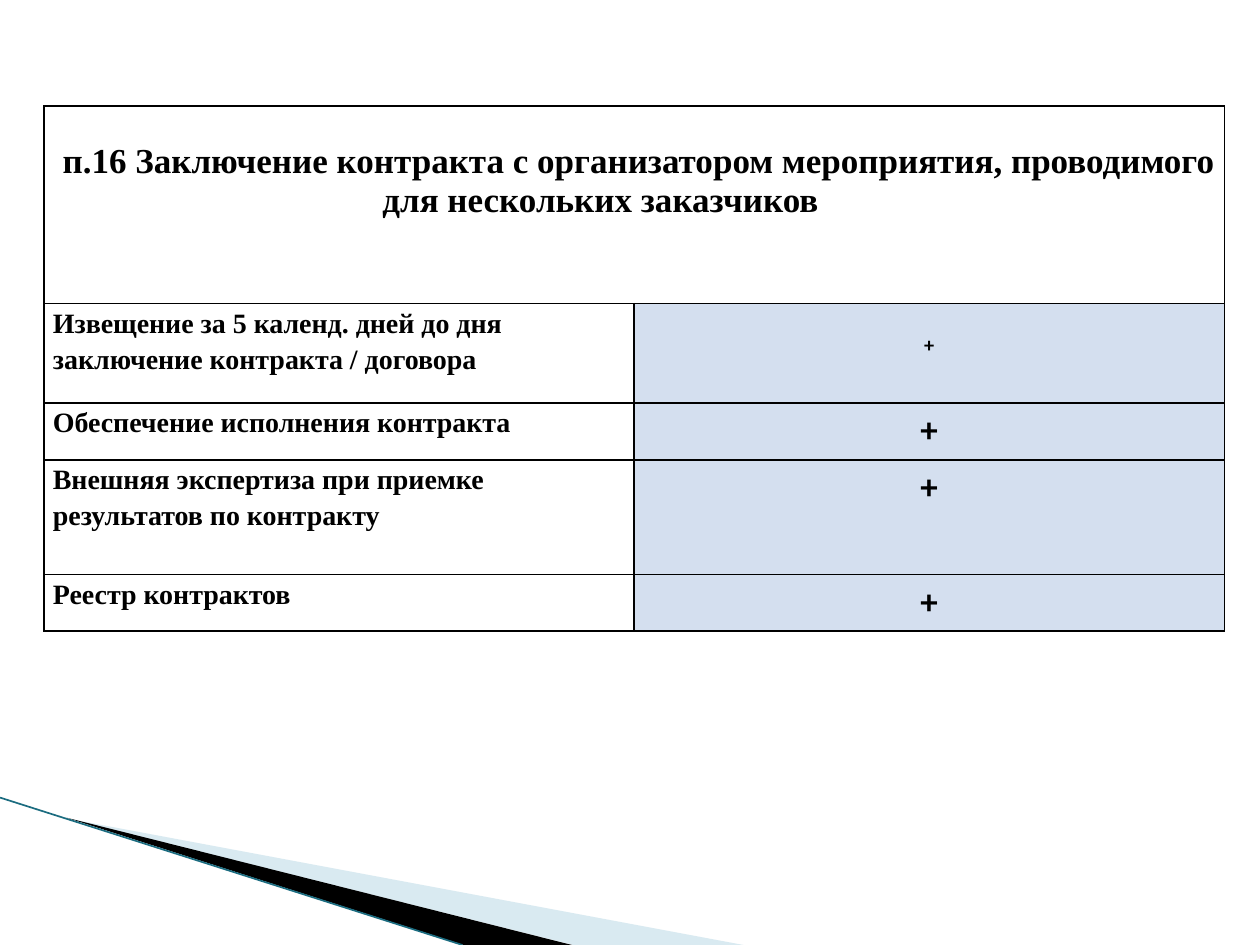
from dataclasses import dataclass

from lxml import etree
from pptx import Presentation
from pptx.dml.color import RGBColor
from pptx.enum.shapes import MSO_CONNECTOR
from pptx.enum.text import PP_ALIGN
from pptx.oxml.ns import qn
from pptx.util import Inches, Pt

STRAIGHT = MSO_CONNECTOR.STRAIGHT
LEFT = PP_ALIGN.LEFT
CENTER = PP_ALIGN.CENTER


@dataclass(frozen=True)
class Theme:
    ink: str = "000000"
    paper: str = "FFFFFF"
    mark: str = "D4DFEF"
    pale: str = "A0CBDC"
    teal: str = "1B6C80"
    serif: str = "Times New Roman"
    sans: str = "Calibri"
    large: int = 20
    small: int = 16


class Deck:
    def __init__(self, theme):
        self.theme = theme
        self.file = Presentation()
        self.file.slide_width = Inches(10)
        self.file.slide_height = Inches(7.5)
        self.slide = self.file.slides.add_slide(self.file.slide_layouts[6])

    def wedge(self, points, color, alpha=100):
        spots = [(Inches(x), Inches(y)) for x, y in points]
        form = self.slide.shapes.build_freeform(*spots[0], scale=1)
        form.add_line_segments(spots[1:], close=True)
        shape = form.convert_to_shape()
        shape.shadow.inherit = False
        shape.line.fill.background()
        shape.fill.solid()
        shape.fill.fore_color.rgb = RGBColor.from_string(color)
        if alpha < 100:
            tint = shape.fill._xPr.find(qn("a:solidFill"))[0]
            etree.SubElement(tint, qn("a:alpha"), val=str(alpha * 1000))

    def line(self, start, end, color, width):
        ends = [Inches(n) for n in (*start, *end)]
        line = self.slide.shapes.add_connector(STRAIGHT, *ends)
        line.line.color.rgb = RGBColor.from_string(color)
        line.line.width = Pt(width)
        etree.SubElement(line._element.spPr, qn("a:effectLst"))

    def table(self, left, top, widths, heights):
        frame = self.slide.shapes.add_table(
            len(heights), len(widths), Inches(left), Inches(top),
            Inches(sum(widths)), Inches(sum(heights)))
        table = frame.table
        for column, width in zip(table.columns, widths):
            column.width = Inches(width)
        for row, height in zip(table.rows, heights):
            row.height = Inches(height)
        for cell in table.iter_cells():
            self.border(cell)
        return table

    def border(self, cell):
        props = cell._tc.get_or_add_tcPr()
        for side in ("lnL", "lnR", "lnT", "lnB"):
            edge = etree.SubElement(props, qn(f"a:{side}"), w=str(Pt(1)))
            fill = etree.SubElement(edge, qn("a:solidFill"))
            etree.SubElement(fill, qn("a:srgbClr"), val=self.theme.ink)

    def cell(self, cell, text, size, font, fill, align=LEFT,
             space=1.15, top=0, shift=0):
        cell.margin_left = cell.margin_right = Inches(0.07)
        cell.margin_top = Inches(top)
        cell.margin_bottom = 0
        cell.fill.solid()
        cell.fill.fore_color.rgb = RGBColor.from_string(fill)
        para = cell.text_frame.paragraphs[0]
        para.alignment = align
        para.line_spacing = space
        run = para.add_run()
        run.text = text
        run.font.size = Pt(size)
        run.font.name = font
        run.font.bold = True
        run.font.color.rgb = RGBColor.from_string(self.theme.ink)
        if shift:
            run.font._element.set("baseline", str(shift * 1000))


def main():
    theme = Theme()
    deck = Deck(theme)
    deck.wedge([(0.55, 6.5), (5.9, 7.5), (4.55, 7.5)], theme.pale, 40)
    deck.wedge([(0.53, 6.49), (4.54, 7.5), (3.68, 7.5)], theme.ink)
    deck.line((0, 6.33), (3.67, 7.5), theme.teal, 0.95)

    head = (" п.16 Заключение контракта с организатором мероприятия, "
            "проводимого для нескольких заказчиков \t")
    rows = [
        ("Извещение за 5 календ. дней до дня заключение контракта / договора", -25),
        ("Обеспечение исполнения контракта", 0),
        ("Внешняя экспертиза при приемке результатов по контракту", 0),
        ("Реестр контрактов", 0),
    ]
    table = deck.table(0.35, 0.84, [4.68, 4.69], [1.57, 0.79, 0.45, 0.91, 0.45])
    table.cell(0, 0).merge(table.cell(0, 1))
    deck.cell(table.cell(0, 0), head, theme.large, theme.serif, theme.paper,
              CENTER, space=1, top=0.29)
    for i, (text, shift) in enumerate(rows, 1):
        deck.cell(table.cell(i, 0), text, theme.small, theme.serif, theme.paper)
        deck.cell(table.cell(i, 1), "+", theme.large, theme.sans, theme.mark,
                  CENTER, shift=shift)
    deck.file.save("out.pptx")


if __name__ == "__main__":
    main()
